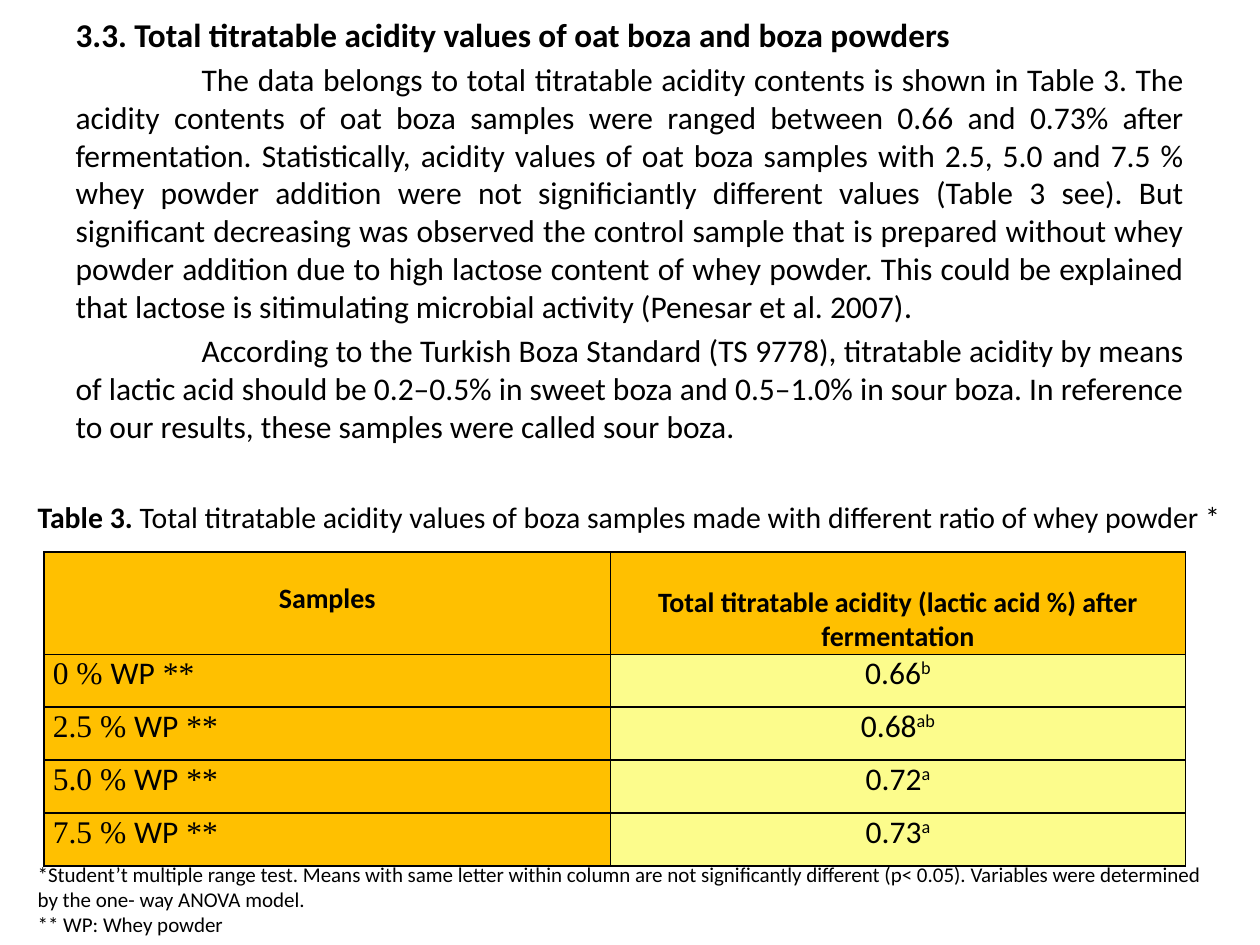
from lxml import etree
from pptx import Presentation
from pptx import util as u
from pptx.dml import color
from pptx.enum import text
from pptx.oxml import ns

COLORS = {"ink": "000000", "header": "FFC000", "value": "FCFC8C"}
WIDTH, HEIGHT = u.Inches(10), u.Inches(7.5)
BODY, SERIF, ACCENT = "Calibri", "Times New Roman", "Lato"
CENTER, JUSTIFY = text.PP_ALIGN.CENTER, text.PP_ALIGN.JUSTIFY

HEADING = "3.3. Total titratable acidity values of oat boza and boza powders"
FINDINGS = (
    "The data belongs to total titratable acidity contents is shown in Table 3. "
    "The acidity contents of oat boza samples were ranged between 0.66 and 0.73% "
    "after fermentation. Statistically, acidity values of oat boza samples with "
    "2.5, 5.0 and 7.5 % whey powder addition were not significiantly different "
    "values (Table 3 see). But significant decreasing was observed the control "
    "sample that is prepared without whey powder addition due to high lactose "
    "content of whey powder. This could be explained that lactose is sitimulating "
    "microbial activity (Penesar et al. 2007)"
)
STANDARD = (
    "According to the Turkish Boza Standard (TS 9778), titratable acidity by means "
    "of lactic acid should be 0.2–0.5% in sweet boza and 0.5–1.0% in sour boza. "
    "In reference to our results, these samples were called sour boza."
)
CAPTION = ("Total titratable acidity values of boza samples made with "
           "different ratio of whey powder *")
FOOTNOTES = (
    "*Student’t multiple range test. Means with same letter within column are not "
    "significantly different (p< 0.05). Variables were determined by the one- way "
    "ANOVA model.",
    "** WP: Whey powder",
)
COLUMNS = ("Samples", "Total titratable acidity (lactic acid %) after fermentation")
ACIDITY = (("0", "0.66", "b"), ("2.5", "0.68", "ab"),
           ("5.0", "0.72", "a"), ("7.5", "0.73", "a"))


def apply(target, values):
    for name, value in values.items():
        setattr(target, name, value)


def share(left, top, width, height):
    return (round(WIDTH * left), round(HEIGHT * top),
            round(WIDTH * width), round(HEIGHT * height))


def add_run(paragraph, words, size, name=BODY, bold=False, raised=False):
    run = paragraph.add_run()
    run.text = words
    apply(run.font, {"size": u.Pt(size), "name": name, "bold": bold})
    run.font.color.rgb = color.RGBColor.from_string(COLORS["ink"])
    if raised:
        run.font._element.set("baseline", "30000")


def next_paragraph(frame, first, **values):
    paragraph = frame.paragraphs[0] if first else frame.add_paragraph()
    apply(paragraph, values)
    return paragraph


def place_discussion(slide, box):
    discussion = slide.placeholders[1]
    apply(discussion, dict(zip(("left", "top", "width", "height"), box)))
    frame = discussion.text_frame
    frame.auto_size = text.MSO_AUTO_SIZE.NONE
    entries = (
        (None, 0, 0, ((HEADING, 19, BODY, True),)),
        (JUSTIFY, 3.6, 1, ((FINDINGS, 18), (".", 18, ACCENT))),
        (JUSTIFY, 3.6, 1, ((STANDARD, 18),)),
    )
    for index, (alignment, before, indent, runs) in enumerate(entries):
        paragraph = next_paragraph(frame, index == 0, alignment=alignment,
                                   space_before=u.Pt(before))
        properties = paragraph._p.get_or_add_pPr()
        properties.set("marL", "0")
        properties.set("indent", str(u.Inches(indent)))
        etree.SubElement(properties, ns.qn("a:buNone"))
        for run in runs:
            add_run(paragraph, *run)


def place_note(slide, box, paragraphs):
    frame = slide.shapes.add_textbox(*box).text_frame
    frame.word_wrap = True
    for index, runs in enumerate(paragraphs):
        paragraph = next_paragraph(frame, index == 0)
        for run in runs:
            add_run(paragraph, *run)


def format_cell(cell, fill, top=0):
    apply(cell, {"margin_left": u.Inches(0.07), "margin_right": u.Inches(0.07),
                 "margin_top": u.Inches(top), "margin_bottom": 0})
    properties = cell._tc.get_or_add_tcPr()
    for side in ("lnL", "lnR", "lnT", "lnB"):
        line = etree.SubElement(properties, ns.qn(f"a:{side}"), w=str(u.Pt(1)))
        solid = etree.SubElement(line, ns.qn("a:solidFill"))
        etree.SubElement(solid, ns.qn("a:srgbClr"), val=COLORS["ink"])
    cell.fill.solid()
    cell.fill.fore_color.rgb = color.RGBColor.from_string(COLORS[fill])
    return cell.text_frame.paragraphs[0]


def place_acidity_table(slide, box):
    left, top, width, height = box
    acidity = slide.shapes.add_table(len(ACIDITY) + 1, len(COLUMNS), *box).table
    apply(acidity, {"first_row": False, "horz_banding": False})
    for column, part in zip(acidity.columns, (0.496, 0.504)):
        column.width = round(width * part)
    header_height = u.Inches(0.81)
    for index, row in enumerate(acidity.rows):
        row.height = (height - header_height) // len(ACIDITY) if index else header_height
    for index, (label, drop) in enumerate(zip(COLUMNS, (0.24, 0.27))):
        paragraph = format_cell(acidity.cell(0, index), "header", drop)
        paragraph.alignment = CENTER
        add_run(paragraph, label, 16, bold=True)
    for index, (percent, value, group) in enumerate(ACIDITY, 1):
        sample = format_cell(acidity.cell(index, 0), "header")
        for words, name in ((f"{percent} % ", SERIF), ("WP", BODY), (" **", SERIF)):
            add_run(sample, words, 18, name)
        result = format_cell(acidity.cell(index, 1), "value")
        result.alignment = CENTER
        add_run(result, value, 18)
        add_run(result, group, 18, raised=True)


def main():
    deck = Presentation()
    apply(deck, {"slide_width": WIDTH, "slide_height": HEIGHT})
    slide = deck.slides.add_slide(deck.slide_layouts[1])
    title = slide.shapes.title._element
    title.getparent().remove(title)
    place_discussion(slide, share(0.05, 0.008, 0.9, 0.515))
    place_acidity_table(slide, share(0.035, 0.584, 0.906, 0.332))
    place_note(slide, share(0.02, 0.521, 0.98, 0.052),
               [[("Table 3. ", 17, BODY, True), (CAPTION, 17)]])
    place_note(slide, share(0.02, 0.905, 0.961, 0.095),
               [[(note, 12)] for note in FOOTNOTES])
    deck.save("out.pptx")


if __name__ == "__main__":
    main()
